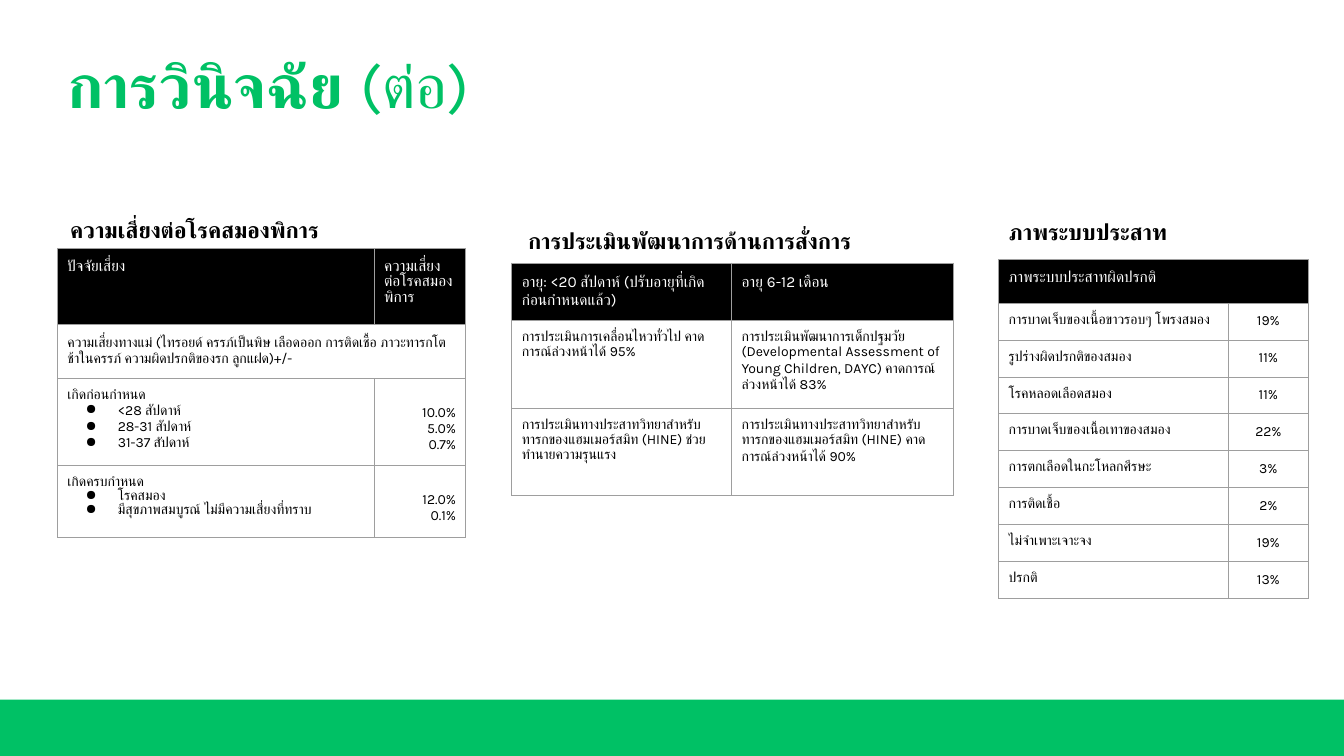
from dataclasses import dataclass

from lxml.etree import SubElement
from pptx import Presentation
from pptx.dml.color import RGBColor
from pptx.enum.shapes import MSO_SHAPE as Shape
from pptx.enum.text import MSO_AUTO_SIZE as AutoSize, PP_ALIGN as Align
from pptx.oxml.ns import qn
from pptx.util import Cm, Pt


@dataclass(frozen=True)
class Theme:
    font: str = "Karla"
    green: str = "00C165"
    black: str = "000000"
    white: str = "FFFFFF"
    border: str = "9E9E9E"
    title: int = 44
    heading: int = 16
    header: int = 11
    body: int = 10


THEME = Theme()


@dataclass(frozen=True)
class Entry:
    text: str
    bullets: tuple = ()
    align: Align = Align.LEFT
    top: float = 0.25


def style(font, size, color, bold=False):
    font.name = THEME.font
    font.size = Pt(size)
    font.bold = bold
    font.color.rgb = RGBColor.from_string(color)


def add_solid(parent, color):
    fill = SubElement(parent, qn("a:solidFill"))
    SubElement(fill, qn("a:srgbClr"), val=color)


def add_text(page, left, top, width, height, text, size, color):
    box = page.shapes.add_textbox(Cm(left), Cm(top), Cm(width), Cm(height))
    box.text_frame.word_wrap = True
    box.text_frame.text = text
    para = box.text_frame.paragraphs[0]
    style(para.runs[0].font, size, color, True)
    return box


def add_title(page, text, suffix):
    box = add_text(page, 1.45, 1.27, 13.89, 1.98, text, THEME.title, THEME.green)
    para = box.text_frame.paragraphs[0]
    para.line_spacing = 0.9
    span = para.add_run()
    span.text = suffix
    style(span.font, THEME.title, THEME.green)


def add_heading(page, left, top, width, text):
    box = add_text(page, left, top, width, 0.94, text, THEME.heading, THEME.black)
    box.text_frame.auto_size = AutoSize.SHAPE_TO_FIT_TEXT


def add_footer(page, deck):
    height = Cm(1.42)
    bar = page.shapes.add_shape(
        Shape.RECTANGLE, 0, deck.slide_height - height, deck.slide_width, height)
    bar.shadow.inherit = False
    bar.fill.solid()
    bar.fill.fore_color.rgb = RGBColor.from_string(THEME.green)
    bar.line.fill.background()


def add_bullet(para):
    properties = para._p.get_or_add_pPr()
    properties.set("marL", str(Cm(1.27)))
    properties.set("indent", str(Cm(-0.81)))
    color = SubElement(properties, qn("a:buClr"))
    SubElement(color, qn("a:srgbClr"), val=THEME.black)
    SubElement(properties, qn("a:buChar"), char="●")


def add_borders(cell):
    properties = cell._tc.get_or_add_tcPr()
    for side in ("lnL", "lnR", "lnT", "lnB"):
        add_solid(SubElement(properties, qn(f"a:{side}"), w=str(Pt(0.75))), THEME.border)


def fill_cell(cell, entry, is_header):
    cell.margin_left = cell.margin_right = cell.margin_bottom = Cm(0.25)
    cell.margin_top = Cm(entry.top)
    add_borders(cell)
    if is_header:
        cell.fill.solid()
        cell.fill.fore_color.rgb = RGBColor.from_string(THEME.black)
    else:
        cell.fill.background()
    size = THEME.header if is_header else THEME.body
    color = THEME.white if is_header else THEME.black
    cell.text_frame.text = "\n".join((entry.text, *entry.bullets))
    for index, para in enumerate(cell.text_frame.paragraphs):
        para.alignment = entry.align
        if 0 < index <= len(entry.bullets):
            add_bullet(para)
        for span in para.runs:
            style(span.font, size, color)


def add_grid(page, left, top, widths, heights, rows):
    table = page.shapes.add_table(
        len(rows), len(widths), Cm(left), Cm(top),
        Cm(sum(widths)), Cm(sum(heights))).table
    table.first_row = table.horz_banding = False
    for column, width in zip(table.columns, widths):
        column.width = Cm(width)
    for row, height in zip(table.rows, heights):
        row.height = Cm(height)
    for r, entries in enumerate(rows):
        for c in range(len(widths)):
            entry = entries[c] if c < len(entries) else Entry("")
            fill_cell(table.cell(r, c), entry, r == 0)
        if len(entries) < len(widths):
            table.cell(r, 0).merge(table.cell(r, len(widths) - 1))


def rates(text):
    return Entry(text, align=Align.RIGHT, top=0.65)


def add_risk_table(page):
    add_heading(page, 1.52, 5.33, 10.13, "ความเสี่ยงต่อโรคสมองพิการ")
    add_grid(page, 1.45, 6.27, (7.98, 2.31), (1.91, 1.36, 2.19, 1.8), [
        (Entry("ปัจจัยเสี่ยง"), Entry("ความเสี่ยงต่อโรคสมองพิการ")),
        (Entry("ความเสี่ยงทางแม่ (ไทรอยด์ ครรภ์เป็นพิษ เลือดออก การติดเชื้อ "
               "ภาวะทารกโตช้าในครรภ์ ความผิดปรกติของรก ลูกแฝด)+/-"),),
        (Entry("เกิดก่อนกำหนด", ("<28 สัปดาห์", "28-31 สัปดาห์", "31-37 สัปดาห์")),
         rates("10.0%\n5.0%\n0.7%")),
        (Entry("เกิดครบกำหนด", ("โรคสมอง", "มีสุขภาพสมบูรณ์ ไม่มีความเสี่ยงที่ทราบ")),
         rates("12.0%\n0.1%")),
    ])


def add_motor_table(page):
    add_heading(page, 13.06, 5.59, 10.13, "การประเมินพัฒนาการด้านการสั่งการ")
    exam = "การประเมินทางประสาทวิทยาสำหรับทารกของแฮมเมอร์สมิท (HINE) "
    add_grid(page, 12.9, 6.63, (5.54, 5.59), (1.44, 2.22, 2.2), [
        (Entry("อายุ: <20 สัปดาห์ (ปรับอายุที่เกิดก่อนกำหนดแล้ว)"),
         Entry("อายุ 6-12 เดือน")),
        (Entry("การประเมินการเคลื่อนไหวทั่วไป คาดการณ์ล่วงหน้าได้ 95%"),
         Entry("การประเมินพัฒนาการเด็กปฐมวัย (Developmental Assessment of "
               "Young Children, DAYC) คาดการณ์ล่วงหน้าได้ 83%")),
        (Entry(exam + "ช่วยทำนายความรุนแรง"),
         Entry(exam + "คาดการณ์ล่วงหน้าได้ 90%")),
    ])


def add_imaging_table(page):
    add_heading(page, 25.17, 5.38, 6.76, "ภาพระบบประสาท")
    findings = [
        ("การบาดเจ็บของเนื้อขาวรอบๆ โพรงสมอง", 19),
        ("รูปร่างผิดปรกติของสมอง", 11),
        ("โรคหลอดเลือดสมอง", 11),
        ("การบาดเจ็บของเนื้อเทาของสมอง", 22),
        ("การตกเลือดในกะโหลกศีรษะ", 3),
        ("การติดเชื้อ", 2),
        ("ไม่จำเพาะเจาะจง", 19),
        ("ปรกติ", 13),
    ]
    rows = [(Entry("ภาพระบบประสาทผิดปรกติ"),)]
    rows += [(Entry(name), Entry(f"{share}%", align=Align.CENTER))
             for name, share in findings]
    heights = [1.09] + [0.93] * len(findings)
    add_grid(page, 25.17, 6.55, (5.79, 2.01), heights, rows)


def main():
    deck = Presentation()
    deck.slide_width, deck.slide_height = Cm(33.87), Cm(19.05)
    page = deck.slides.add_slide(deck.slide_layouts[6])
    add_footer(page, deck)
    add_title(page, "การวินิจฉัย ", "(ต่อ)")
    add_risk_table(page)
    add_motor_table(page)
    add_imaging_table(page)
    deck.save("out.pptx")


if __name__ == "__main__":
    main()
